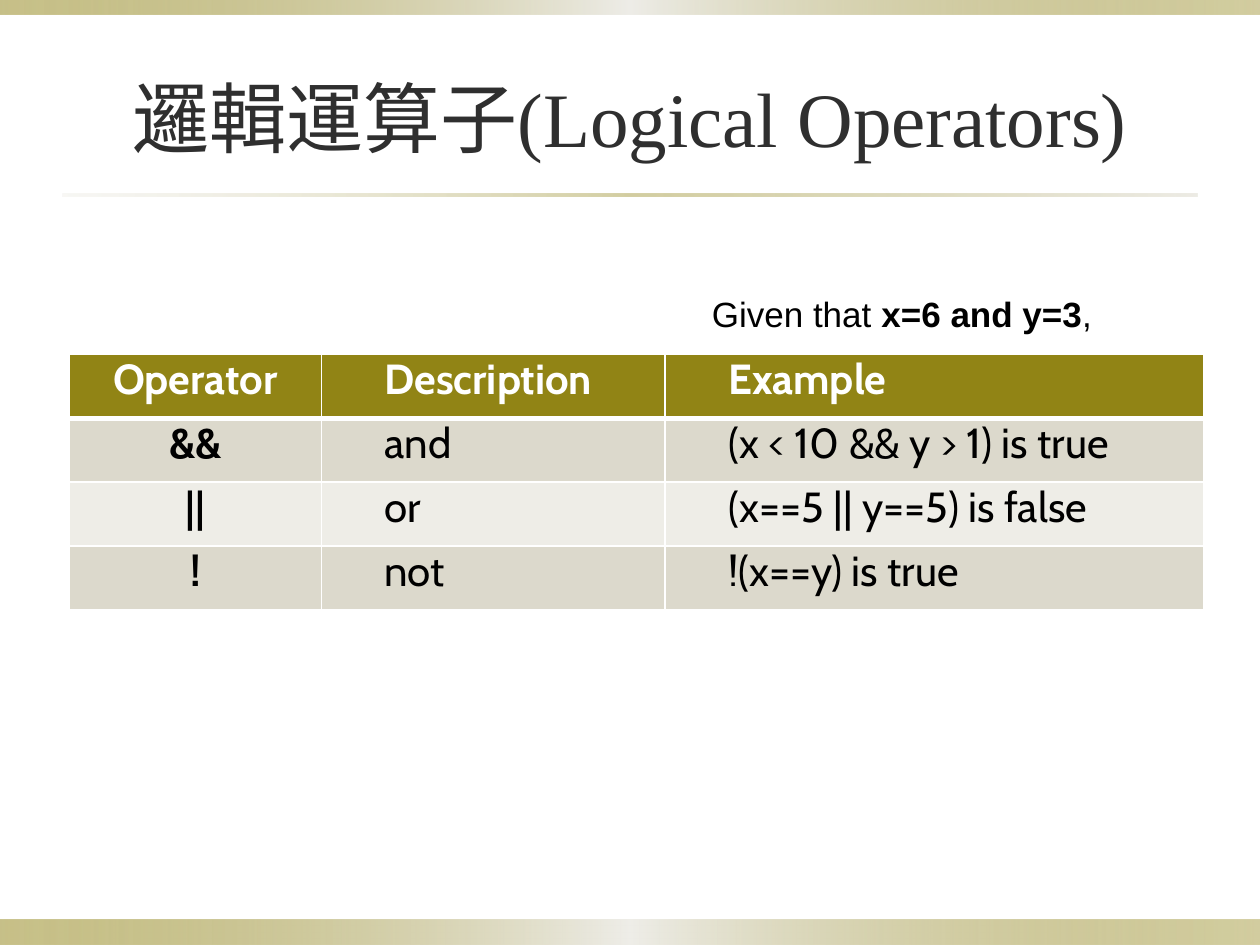
from lxml.etree import SubElement
from pptx import Presentation
from pptx.dml.color import RGBColor
from pptx.enum.shapes import MSO_SHAPE
from pptx.enum.text import MSO_ANCHOR, MSO_AUTO_SIZE, PP_ALIGN
from pptx.oxml.ns import qn
from pptx.util import Cm, Pt

# Content
TITLE = "邏輯運算子(Logical Operators)"
GIVEN = [("Given that ", False), ("x=6 and y=3", True), (",", False)]
OPERATORS = [
    ("Operator", "Description", "Example"),
    ("&&", "and", "(x < 10 && y > 1) is true"),
    ("||", "or", "(x==5 || y==5) is false"),
    ("!", "not", "!(x==y) is true"),
]

# Look: gradient stops are (position %, colour, opacity %)
OLIVE, SAND, PALE, WHITE, BLACK = "918415", "DCD9CC", "EEEDE7", "FFFFFF", "000000"
BAND_STOPS = [(0, OLIVE, 50), (50, "EEEDE8", 100), (100, OLIVE, 40)]
RULE_STOPS = [(0, SAND, 20), (50, OLIVE, 40), (100, SAND, 50)]
STRIPS = [  # left, top, width, height, stops
    (0, 18.54, 25.4, 0.51, BAND_STOPS),
    (0, 0, 25.4, 0.3, BAND_STOPS),
    (1.27, 3.91, 22.86, 0.05, RULE_STOPS),
]
COLUMN_WIDTHS = [5.08, 6.93, 10.85]
ROW_HEIGHT = 1.29
INDENT = 1.27


def colour(value):
    return RGBColor.from_string(value)


def set_font(font, name, size, value, bold=None):
    font.name, font.size, font.bold = name, Pt(size), bold
    font.color.rgb = colour(value)


def add_strip(left, top, width, height, stops):
    strip = slide.shapes.add_shape(
        MSO_SHAPE.RECTANGLE, Cm(left), Cm(top), Cm(width), Cm(height))
    strip.shadow.inherit = False
    strip.line.fill.background()
    strip.fill.gradient()
    strip.fill.gradient_angle = 0
    stop_list = next(strip.element.iter(qn("a:gsLst")))
    for old_stop in list(stop_list):
        stop_list.remove(old_stop)
    for position, value, opacity in stops:
        stop = SubElement(stop_list, qn("a:gs"), pos=str(position * 1000))
        rgb = SubElement(stop, qn("a:srgbClr"), val=value)
        SubElement(rgb, qn("a:alpha"), val=str(opacity * 1000))


def set_borders(cell, **widths):
    properties = cell._tc.get_or_add_tcPr()
    for index, (side, width) in enumerate(widths.items()):
        border = SubElement(properties, qn(f"a:ln{side}"), w=str(Pt(width)))
        fill = SubElement(border, qn("a:solidFill"))
        SubElement(fill, qn("a:srgbClr"), val=WHITE)
        properties.insert(index, border)  # borders come before the fill


def add_text(left, top, width, height):
    box = slide.shapes.add_textbox(Cm(left), Cm(top), Cm(width), Cm(height))
    return box.text_frame


presentation = Presentation()
presentation.slide_width, presentation.slide_height = Cm(25.4), Cm(19.05)
slide = presentation.slides.add_slide(presentation.slide_layouts[6])

# Bands at the edges and the rule under the title
for strip_spec in STRIPS:
    add_strip(*strip_spec)

# Title
title = add_text(1.27, 0.76, 22.86, 3.18)
title.word_wrap = True
title.vertical_anchor = MSO_ANCHOR.MIDDLE
heading = title.paragraphs[0]
heading.text = TITLE
heading.alignment = PP_ALIGN.CENTER
set_font(heading.font, "Times New Roman", 44, "2F2F2F")

# Operator table
operators = slide.shapes.add_table(
    len(OPERATORS), len(COLUMN_WIDTHS), Cm(1.4), Cm(7.14),
    Cm(sum(COLUMN_WIDTHS)), Cm(ROW_HEIGHT * len(OPERATORS))).table
for column, width in zip(operators.columns, COLUMN_WIDTHS):
    column.width = Cm(width)
for r, words in enumerate(OPERATORS):
    operators.rows[r].height = Cm(ROW_HEIGHT)
    header = r == 0
    for c, word in enumerate(words):
        cell = operators.cell(r, c)
        cell.margin_left = cell.margin_right = 0
        cell.margin_top = cell.margin_bottom = 0
        cell.fill.solid()
        cell.fill.fore_color.rgb = colour(OLIVE if header else SAND if r % 2 else PALE)
        set_borders(cell, L=1, R=1, T=3 if r == 1 else 1, B=3 if header else 1)
        entry = cell.text_frame.paragraphs[0]
        entry.text = word
        if c == 0:
            entry.alignment = PP_ALIGN.CENTER
        else:
            indent = entry._p.get_or_add_pPr()
            indent.set("marL", str(Cm(INDENT)))
            indent.set("indent", "0")
        set_font(entry.font, "Cabin", 24, WHITE if header else BLACK,
                 bold=header or c == 0)

# Given values
given = add_text(14.1, 5.77, 8.23, 1.12)
given.word_wrap = False
given.auto_size = MSO_AUTO_SIZE.SHAPE_TO_FIT_TEXT
sentence = given.paragraphs[0]
set_font(sentence.font, "Arial", 20, BLACK)
for words, bold in GIVEN:
    run = sentence.add_run()
    run.text = words
    run.font.bold = bold

presentation.save("out.pptx")
